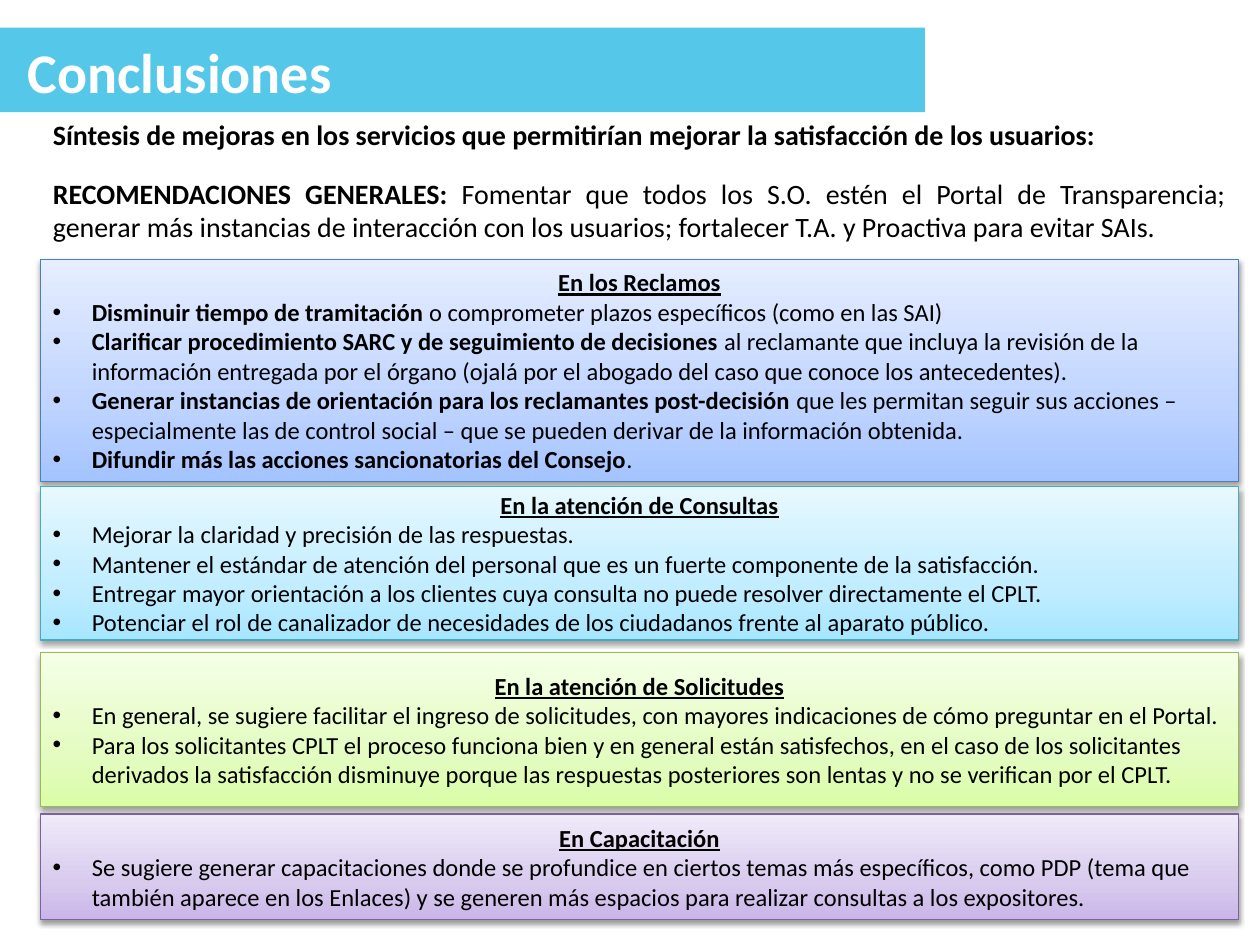
from dataclasses import dataclass

from lxml import etree
from pptx import Presentation
from pptx import util as u
from pptx.dml.color import RGBColor
from pptx.enum import shapes, text
from pptx.oxml import ns


@dataclass(frozen=True)
class Theme:
    font: str = "Calibri"
    band: str = "55C8E9"
    white: str = "FFFFFF"
    black: str = "000000"
    head: int = 32
    lead: int = 16
    item: int = 14
    left: float = 0.32
    wide: float = 9.51


THEME = Theme()

LEAD = [
    ("Síntesis de mejoras en los servicios que permitirían mejorar la satisfacción de los usuarios:", ""),
    ("RECOMENDACIONES GENERALES: ",
     "Fomentar que todos los S.O. estén el Portal de Transparencia; generar más instancias de "
     "interacción con los usuarios; fortalecer T.A. y Proactiva para evitar SAIs."),
]

# Each panel: top, height, line colour, gradient colours, heading, (bold, plain) items
PANELS = [
    (2.06, 1.76, "4B7EBC", ("A4C4FF", "BFD4FF", "E6EEFF"), "En los Reclamos", [
        ("Disminuir tiempo de tramitación ", "o comprometer plazos específicos (como en las SAI)"),
        ("Clarificar procedimiento SARC y de seguimiento de decisiones ",
         "al reclamante que incluya la revisión de la información entregada por el órgano "
         "(ojalá por el abogado del caso que conoce los antecedentes)."),
        ("Generar instancias de orientación para los reclamantes post-decisión ",
         "que les permitan seguir sus acciones – especialmente las de control social – "
         "que se pueden derivar de la información obtenida."),
        ("Difundir más las acciones sancionatorias del Consejo", "."),
    ]),
    (3.86, 1.22, "46AAC5", ("A7E6FF", "C1EDFF", "E7F8FF"), "En la atención de Consultas", [
        ("", "Mejorar la claridad y precisión de las respuestas."),
        ("", "Mantener el estándar de atención del personal que es un fuerte componente de la satisfacción."),
        ("", "Entregar mayor orientación a los clientes cuya consulta no puede resolver directamente el CPLT."),
        ("", "Potenciar el rol de canalizador de necesidades de los ciudadanos frente al aparato público."),
    ]),
    (5.18, 1.22, "98B955", ("DAFDA7", "E4FCC2", "F5FFE7"), "En la atención de Solicitudes", [
        ("", "En general, se sugiere facilitar el ingreso de solicitudes, con mayores indicaciones "
             "de cómo preguntar en el Portal."),
        ("", "Para los solicitantes CPLT el proceso funciona bien y en general están satisfechos, "
             "en el caso de los solicitantes derivados la satisfacción disminuye porque las respuestas "
             "posteriores son lentas y no se verifican por el CPLT."),
    ]),
    (6.46, 0.84, "7D60A0", ("C9B5E8", "D8CBEE", "F0EAF9"), "En Capacitación", [
        ("", "Se sugiere generar capacitaciones donde se profundice en ciertos temas más específicos, "
             "como PDP (tema que también aparece en los Enlaces) y se generen más espacios para "
             "realizar consultas a los expositores."),
    ]),
]


def node(root, tag, **attrs):
    return etree.SubElement(root, ns.qn(tag), {k: str(v) for k, v in attrs.items()})


def place(shape, left, top, wide, high):
    shape.left, shape.top = u.Inches(left), u.Inches(top)
    shape.width, shape.height = u.Inches(wide), u.Inches(high)


def style(font, size, color=THEME.black, bold=False):
    font.name, font.size, font.bold = THEME.font, u.Pt(size), bold
    font.color.rgb = RGBColor.from_string(color)


def write(para, bold, plain, size):
    for words, heavy in ((bold, True), (plain, False)):
        if words:
            run = para.add_run()
            run.text = words
            style(run.font, size, bold=heavy)


def indent(para, mark=None):
    """Set a hanging bullet, or clear the inherited one."""
    props = para._p.get_or_add_pPr()
    gap = u.Inches(0.31) if mark else 0
    props.set("marL", str(gap))
    props.set("indent", str(-gap))
    if mark:
        node(props, "a:buFont", typeface="Arial")
        node(props, "a:buChar", char=mark)
    else:
        node(props, "a:buNone")


def add_band(slide):
    band = slide.shapes.add_shape(shapes.MSO_SHAPE.RECTANGLE, 0, 0, 0, 0)
    place(band, 0, 0.22, 7.34, 0.67)
    band.shadow.inherit = False
    band.fill.solid()
    band.fill.fore_color.rgb = RGBColor.from_string(THEME.band)
    band.line.fill.background()
    # Send the band behind the title
    slide.shapes.title._element.addprevious(band._element)


def add_title(slide):
    title = slide.shapes.title
    place(title, 0.12, 0.25, 2.64, 0.64)
    frame = title.text_frame
    frame.text = "Conclusiones"
    frame.word_wrap = False
    frame.auto_size = text.MSO_AUTO_SIZE.NONE
    frame.vertical_anchor = text.MSO_ANCHOR.TOP
    para = frame.paragraphs[0]
    para.alignment = text.PP_ALIGN.LEFT
    style(para.runs[0].font, THEME.head, THEME.white, True)


def add_lead(slide):
    body = slide.placeholders[1]
    place(body, THEME.left, 0.88, THEME.wide, 1.11)
    frame = body.text_frame
    frame.auto_size = text.MSO_AUTO_SIZE.NONE
    for i, (bold, plain) in enumerate(LEAD):
        para = frame.add_paragraph() if i else frame.paragraphs[0]
        indent(para)
        para.alignment = text.PP_ALIGN.JUSTIFY
        para.space_before = u.Pt(14.5 if i else 0)
        write(para, bold, plain, THEME.lead)


def shade(shape, colors):
    """Fill with a three-stop vertical gradient and add a soft shadow."""
    shape.fill.gradient()
    shape.fill.gradient_angle = 90
    stops = shape._element.spPr.find(".//" + ns.qn("a:gsLst"))
    for old in list(stops):
        stops.remove(old)
    for pos, color in zip((0, 35, 100), colors):
        node(node(stops, "a:gs", pos=pos * 1000), "a:srgbClr", val=color)
    shape.shadow.inherit = False
    effects = shape._element.spPr.find(ns.qn("a:effectLst"))
    cast = node(effects, "a:outerShdw", blurRad=u.Pt(3.1), dist=u.Pt(1.6),
                dir=90 * 60000, rotWithShape=0)
    node(node(cast, "a:srgbClr", val=THEME.black), "a:alpha", val=38000)


def add_panel(slide, top, high, edge, colors, head, items):
    panel = slide.shapes.add_shape(shapes.MSO_SHAPE.RECTANGLE, 0, 0, 0, 0)
    place(panel, THEME.left, top, THEME.wide, high)
    panel.line.color.rgb = RGBColor.from_string(edge)
    panel.line.width = u.Pt(0.75)
    shade(panel, colors)
    frame = panel.text_frame
    frame.word_wrap = True
    frame.vertical_anchor = text.MSO_ANCHOR.MIDDLE
    para = frame.paragraphs[0]
    para.alignment = text.PP_ALIGN.CENTER
    write(para, head, "", THEME.item)
    para.runs[0].font.underline = True
    for bold, plain in items:
        para = frame.add_paragraph()
        indent(para, "•")
        para.alignment = text.PP_ALIGN.LEFT
        write(para, bold, plain, THEME.item)


def main():
    deck = Presentation()
    deck.slide_width, deck.slide_height = u.Inches(10), u.Inches(7.5)
    slide = deck.slides.add_slide(deck.slide_layouts[1])
    # Heading and introduction
    add_band(slide)
    add_title(slide)
    add_lead(slide)
    # Recommendations by service
    for panel in PANELS:
        add_panel(slide, *panel)
    deck.save("out.pptx")


if __name__ == "__main__":
    main()
